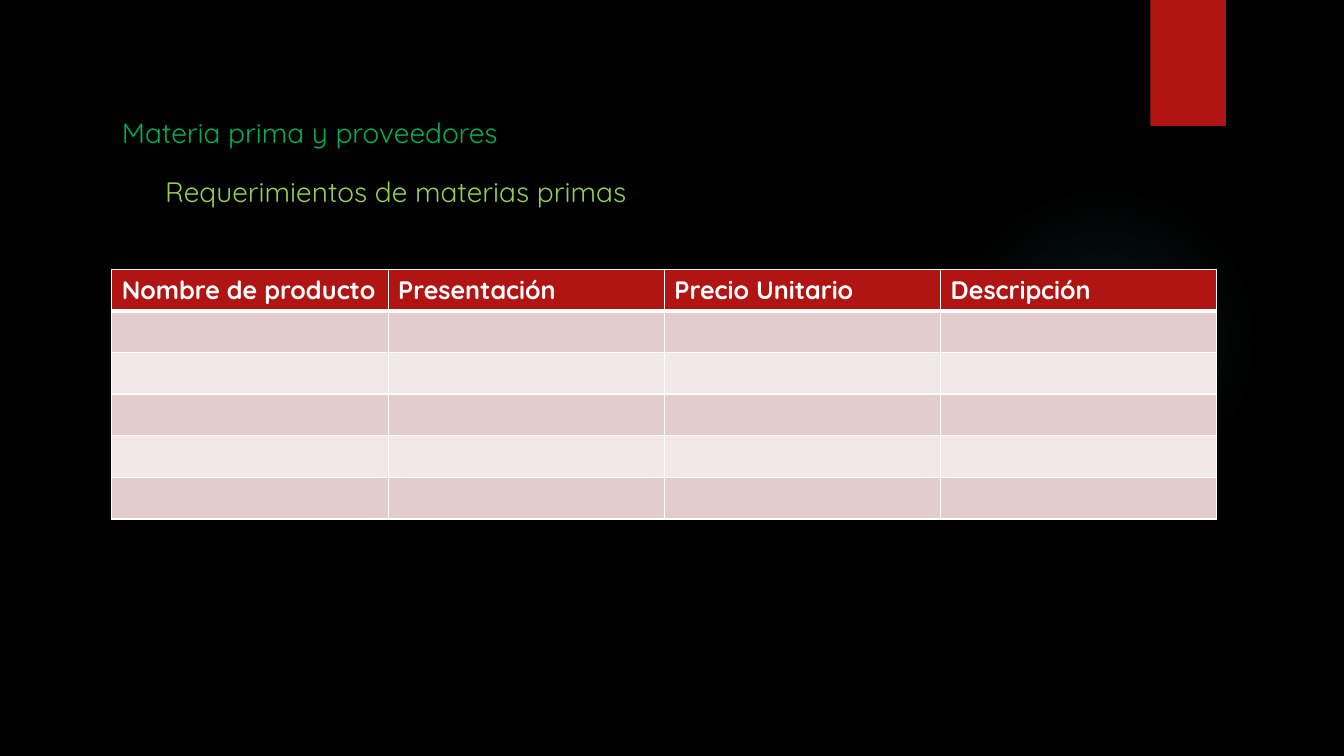
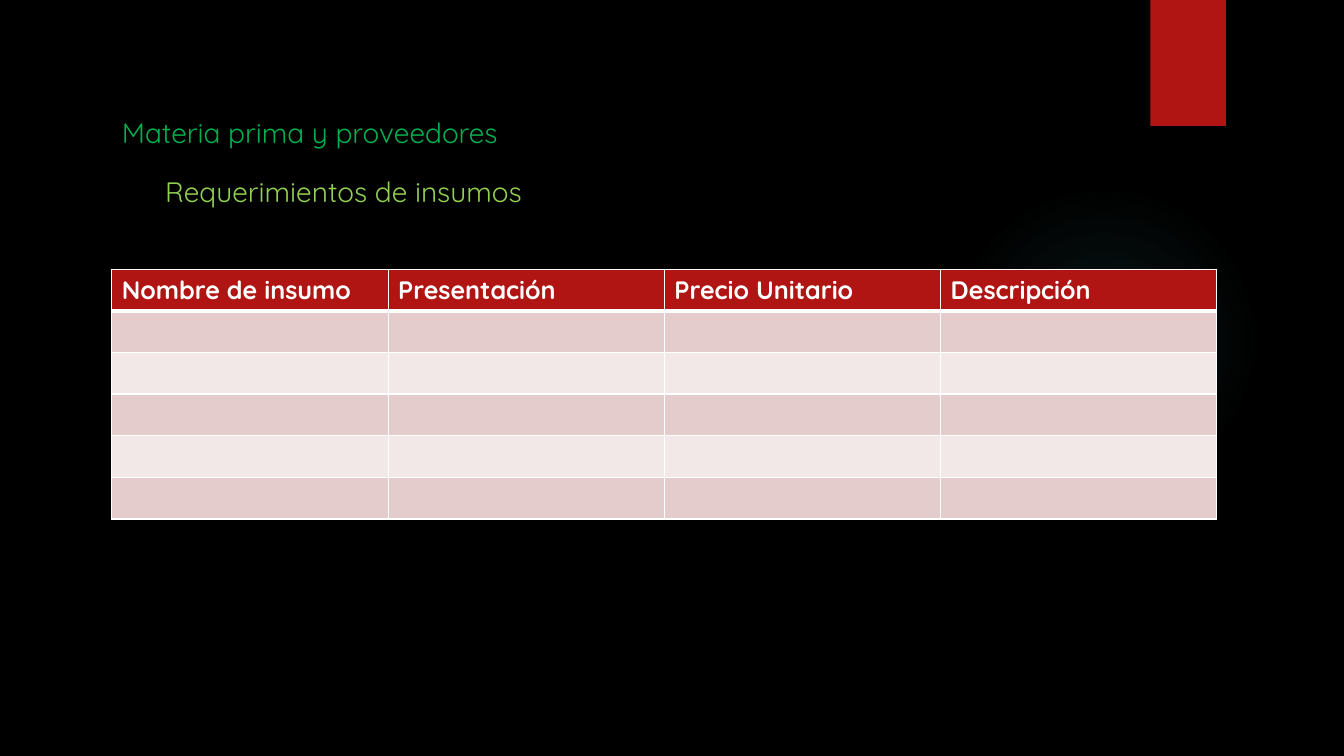
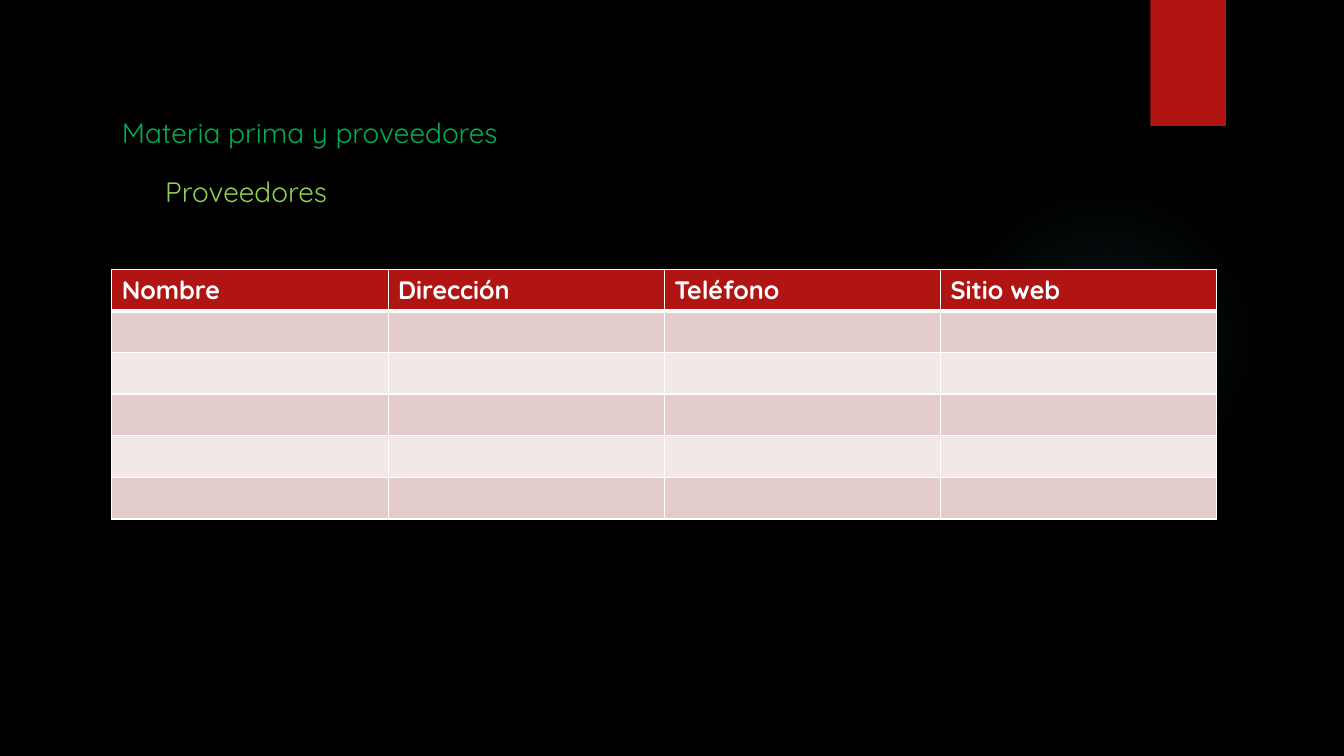
from pptx import Presentation, util as u
from pptx.dml.color import RGBColor
from pptx.enum import shapes
from pptx.oxml import parse_xml
from pptx.oxml.ns import nsdecls

FONT = "Quicksand"
BLACK, WHITE, RED, TEAL = "000000", "FFFFFF", "B01513", "50B9C1"
GREEN, LIME = "00B050", "92D050"
BANDS = ("E4CCCC", "F2E8E7")
GLOW_STOPS = ((0, 7), (36, 6), (69, 0), (100, 0))  # position, opacity in percent

HEADING = "Materia prima y proveedores"
EMPTY_ROWS = 5
SLIDES = (
    ("Requerimientos de materias primas",
     ("Nombre de producto", "Presentación", "Precio Unitario", "Descripción")),
    ("Requerimientos de insumos",
     ("Nombre de insumo", "Presentación", "Precio Unitario", "Descripción")),
    ("Proveedores",
     ("Nombre", "Dirección", "Teléfono", "Sitio web")),
)

GLOW_BOX = (9.41, 1.83, 3.08, 3.08)
TAB_BOX = (11.41, 0, 0.75, 1.25)
HEADING_BOX = (1.11, 1.1, 10.29, 0.45)
SUBHEADING_BOX = (1.54, 1.68, 4.94, 0.45)
TABLE_BOX = (1.11, 2.67, 10.96, 2.48)


def inches(box):
    return [u.Inches(length) for length in box]


def paint(fill, color):
    fill.solid()
    fill.fore_color.rgb = RGBColor.from_string(color)


def style(paragraph, size, color, bold=False):
    font = paragraph.font
    font.name, font.size, font.bold = FONT, u.Pt(size), bold
    font.color.rgb = RGBColor.from_string(color)


def add_plain_shape(slide, kind, box):
    shape = slide.shapes.add_shape(kind, *inches(box))
    shape.shadow.inherit = False
    shape.line.fill.background()
    return shape


def add_glow(slide, box):
    """Faint circular glow that fades out towards its rim."""
    shape = add_plain_shape(slide, shapes.MSO_SHAPE.OVAL, box)
    stops = "".join(
        f'<a:gs pos="{position * 1000}"><a:srgbClr val="{TEAL}">'
        f'<a:alpha val="{opacity * 1000}"/></a:srgbClr></a:gs>'
        for position, opacity in GLOW_STOPS)
    gradient = parse_xml(
        f'<a:gradFill {nsdecls("a")}><a:gsLst>{stops}</a:gsLst><a:path path="circle">'
        '<a:fillToRect l="50000" t="50000" r="50000" b="50000"/></a:path></a:gradFill>')
    shape.element.spPr.prstGeom.addnext(gradient)


def add_corner_tab(slide, box):
    paint(add_plain_shape(slide, shapes.MSO_SHAPE.RECTANGLE, box).fill, RED)


def add_label(slide, box, words, color):
    frame = slide.shapes.add_textbox(*inches(box)).text_frame
    frame.word_wrap = True
    paragraph = frame.paragraphs[0]
    paragraph.text = words
    style(paragraph, 20, color)


def set_borders(cell, top, bottom):
    properties = cell._tc.get_or_add_tcPr()
    for side, width in (("L", 1), ("R", 1), ("T", top), ("B", bottom)):
        properties.append(parse_xml(
            f'<a:ln{side} {nsdecls("a")} w="{u.Pt(width)}"><a:solidFill>'
            f'<a:srgbClr val="{WHITE}"/></a:solidFill></a:ln{side}>'))


def add_banded_table(slide, box, headers):
    row_count = EMPTY_ROWS + 1
    table = slide.shapes.add_table(row_count, len(headers), *inches(box)).table
    for row_index in range(row_count):
        is_header = row_index == 0
        for column_index, header in enumerate(headers):
            cell = table.cell(row_index, column_index)
            set_borders(cell, 3 if row_index == 1 else 1, 3 if is_header else 1)
            paint(cell.fill, RED if is_header else BANDS[(row_index - 1) % 2])
            if is_header:
                cell.text = header
                style(cell.text_frame.paragraphs[0], 18, WHITE, bold=True)


def add_table_slide(presentation, subheading, headers):
    slide = presentation.slides.add_slide(presentation.slide_layouts[6])
    add_glow(slide, GLOW_BOX)
    add_corner_tab(slide, TAB_BOX)
    add_label(slide, HEADING_BOX, HEADING, GREEN)
    add_label(slide, SUBHEADING_BOX, subheading, LIME)
    add_banded_table(slide, TABLE_BOX, headers)


def main():
    presentation = Presentation()
    presentation.slide_width, presentation.slide_height = inches((13.33, 7.5))
    paint(presentation.slide_master.background.fill, BLACK)
    for subheading, headers in SLIDES:
        add_table_slide(presentation, subheading, headers)
    presentation.save("out.pptx")


if __name__ == "__main__":
    main()
